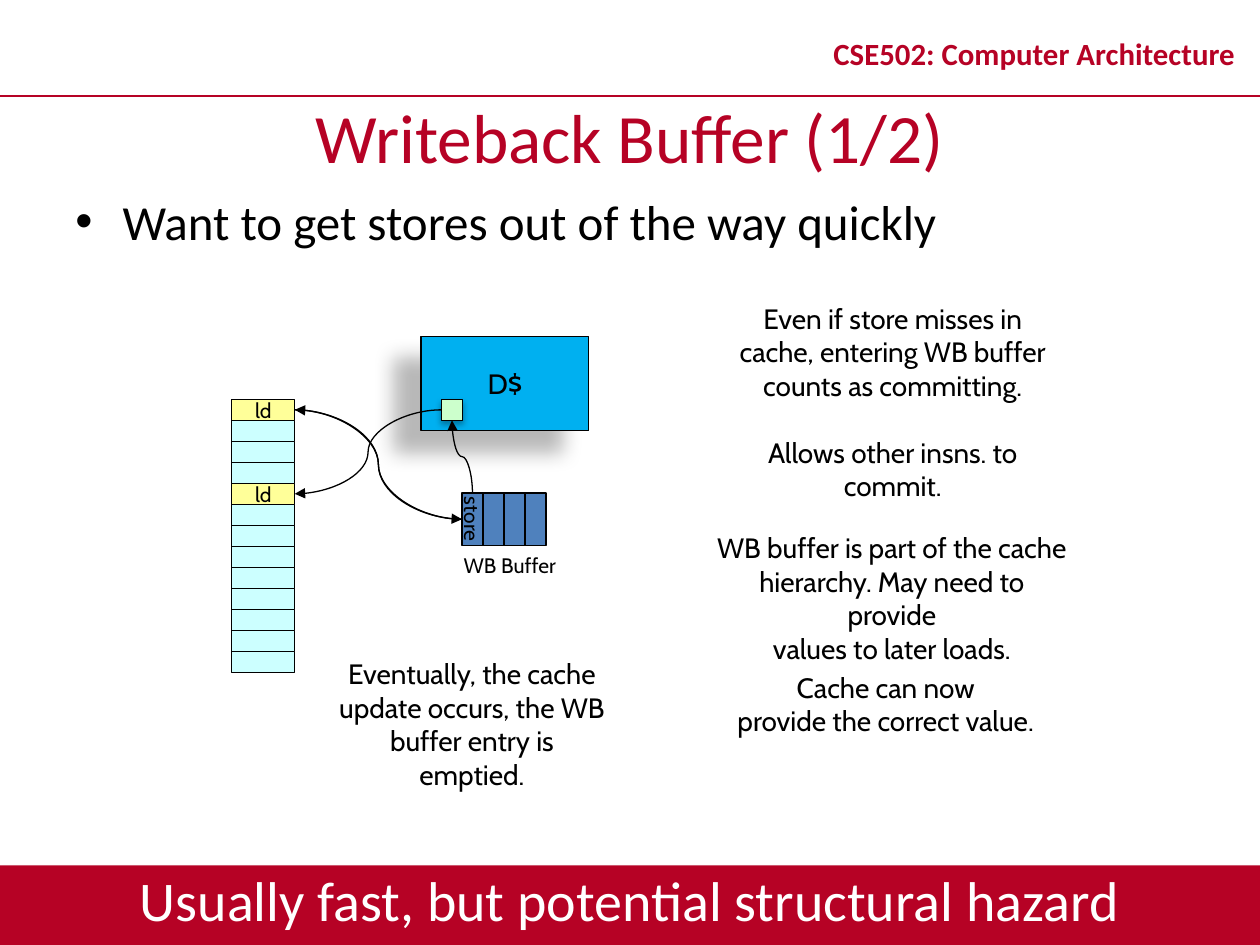
from dataclasses import dataclass
from lxml.etree import SubElement
from pptx import Presentation
from pptx.dml.color import RGBColor
from pptx.enum.shapes import MSO_CONNECTOR as Conn, MSO_SHAPE as Shape
from pptx.enum.text import MSO_ANCHOR as Anchor, PP_ALIGN as Align
from pptx.oxml.ns import qn
from pptx.util import Pt


@dataclass(frozen=True)
class Theme:
    red: str = "B60225"
    black: str = "000000"
    white: str = "FFFFFF"
    cache: str = "00B0F0"
    block: str = "CCFFCC"
    buffer: str = "4F81BD"
    entry: str = "CCFFFF"
    load: str = "FFFF99"
    head_font: str = "Calibri"
    note_font: str = "Cabin"
    title: float = 39.6
    footer: float = 32
    body: float = 28
    header: float = 17.6
    note: float = 16
    label: float = 12
    line: float = 0.75


T = Theme()


def rgb(value):
    return RGBColor.from_string(value)


def write(shape, text, size=T.note, font=T.note_font, color=T.black, bold=False,
          align=Align.CENTER, anchor=Anchor.TOP, wrap=True, spacing=None, gaps=None, bullet=0):
    tf = shape.text_frame
    tf.word_wrap = wrap
    tf.vertical_anchor = anchor
    for i, line in enumerate(text.split("\n")):
        p = tf.paragraphs[0] if i == 0 else tf.add_paragraph()
        p.alignment = align
        p.line_spacing = spacing
        p.space_before = Pt((gaps or {}).get(i, 0))
        if bullet:
            pPr = p._p.get_or_add_pPr()
            pPr.set("marL", str(Pt(bullet)))
            pPr.set("indent", str(-Pt(bullet)))
            SubElement(pPr, qn("a:buFont")).set("typeface", "Arial")
            SubElement(pPr, qn("a:buChar")).set("char", "•")
        r = p.add_run()
        r.text = line
        r.font.name, r.font.size, r.font.bold = font, Pt(size), bold
        r.font.color.rgb = rgb(color)


def text_box(s, box, text, **fmt):
    write(s.shapes.add_textbox(*map(Pt, box)), text, **fmt)


def rect(s, box, fill, line=T.black, shadow=None, text=None, size=T.label):
    sp = s.shapes.add_shape(Shape.RECTANGLE, *map(Pt, box))
    sp.fill.solid()
    sp.fill.fore_color.rgb = rgb(fill)
    if line:
        sp.line.color.rgb = rgb(line)
        sp.line.width = Pt(T.line)
    else:
        sp.line.fill.background()
    sp.shadow.inherit = False
    if shadow:
        alpha, blur, dist, angle = shadow
        effects = sp._element.spPr.find(qn("a:effectLst"))
        outer = SubElement(effects, qn("a:outerShdw"), blurRad=str(Pt(blur)),
                           dist=str(Pt(dist)), dir=str(angle * 60000), rotWithShape="0")
        color = SubElement(outer, qn("a:srgbClr"), val=T.black)
        SubElement(color, qn("a:alpha"), val=str(alpha * 1000))
    if text:
        write(sp, text, size=size, anchor=Anchor.MIDDLE, wrap=False)
    return sp


def connect(s, start, end, kind=Conn.CURVE, color=T.black, width=T.line, arrow=True):
    c = s.shapes.add_connector(kind, *map(Pt, (*start, *end)))
    c.line.color.rgb = rgb(color)
    c.line.width = Pt(width)
    if arrow:
        SubElement(c.line._get_or_add_ln(), qn("a:tailEnd"), type="triangle")
    SubElement(c._element.spPr, qn("a:effectLst"))
    return c


def connect_up(s, start, end):
    (x1, y1), (x2, y2) = start, end
    cx, cy = (x1 + x2) / 2, (y1 + y2) / 2
    dx, dy = (y1 - y2) / 2, (x1 - x2) / 2
    c = connect(s, (cx + dx, cy - dy), (cx - dx, cy + dy))
    c._element.spPr.find(qn("a:xfrm")).set("rot", str(90 * 60000))


def frame(s, box):
    x, y, w, h = box
    rect(s, (x, y + h - 45.5, w, 45.5), T.red, line=None, shadow=(35, 3.1, 1.8, 90))
    connect(s, (x, y + 54.7), (x + w, y + 54.7), kind=Conn.STRAIGHT,
            color=T.red, width=1, arrow=False)
    text_box(s, (x + w - 257.8, y + 9.4, 257.8, 45.4), "CSE502: Computer Architecture",
             size=T.header, font=T.head_font, color=T.red, bold=True,
             anchor=Anchor.MIDDLE, spacing=0.8)
    text_box(s, (x, y + h - 49, w, 45.4), "Usually fast, but potential structural hazard",
             size=T.footer, font=T.head_font, color=T.white)


def heading(s, box):
    x, y, w, h = box
    title = s.shapes.title
    title.left, title.top, title.width, title.height = map(Pt, (x, y, w, h))
    write(title, "Writeback Buffer (1/2)", size=T.title, font=T.head_font,
          color=T.red, anchor=Anchor.MIDDLE)
    text_box(s, (x + 36, y + 51.3, w - 72, 385), "Want to get stores out of the way quickly",
             size=T.body, font=T.head_font, align=Align.LEFT, bullet=27)


def load_queue(s, box, rows=13, loads=(0, 4)):
    x, y, w, h = box
    step = h / rows
    for i in range(rows):
        is_load = i in loads
        rect(s, (x, y + i * step, w, step), T.load if is_load else T.entry,
             text="ld" if is_load else None)
    return [(x + w, y + (i + 0.5) * step) for i in loads]


def writeback_buffer(s, box, cells=4):
    x, y, w, h = box
    step = w / cells
    for i in range(1, cells):
        rect(s, (x + i * step, y, step, h), T.buffer)
    store = rect(s, (x + (step - h) / 2, y + (h - step) / 2, h, step), T.buffer, text="store")
    store.rotation = 90
    text_box(s, (x - 6.2, y + h + 0.5, 67, 36), "WB Buffer", size=T.label)
    return (x, y + h / 2), (x + step / 2, y)


def data_cache(s, box):
    x, y, w, h = box
    rect(s, box, T.cache, shadow=(28, 11.8, 19.7, 141), text="D$", size=T.note)
    side = 12
    bx, by = x + 11.8, y + h - 18
    rect(s, (bx, by, side, side), T.block, shadow=(32, 3.5, 2.2, 90))
    return (bx, by + side / 2), (bx + side / 2, by + side)


def diagram(s, box):
    x, y, w, h = box
    block_left, block_bottom = data_cache(s, (x + 108, y, 96, 54))
    first_load, second_load = load_queue(s, (x, y + 36, 36, 156))
    store_left, store_top = writeback_buffer(s, (x + 131.5, y + 89.5, 48, 30))
    connect(s, first_load, store_left)
    connect(s, store_left, first_load)
    connect(s, block_left, second_load)
    connect_up(s, store_top, block_bottom)
    text_box(s, (x + 53.3, y + 179.5, 167.8, 84),
             "Eventually, the cache\nupdate occurs, the WB\nbuffer entry is emptied.")


def notes_column(s, box):
    x, y, w, h = box
    text_box(s, (x, y, w, 120),
             "Even if store misses in\ncache, entering WB buffer\ncounts as committing.\n"
             "Allows other insns. to commit.", gaps={3: 19.2})
    text_box(s, (x - 0.5, y + 131.3, w, 84),
             "WB buffer is part of the cache\nhierarchy. May need to provide\n"
             "values to later loads.")
    text_box(s, (x + 11.5, y + h - 46, 184.3, 46),
             "Cache can now\nprovide the correct value.")


def main():
    prs = Presentation()
    prs.slide_width, prs.slide_height = Pt(720), Pt(540)
    s = prs.slides.add_slide(prs.slide_layouts[5])
    frame(s, (0, 0, 720, 540))
    heading(s, (0, 54.7, 720, 45.4))
    diagram(s, (132.5, 192.2, 221, 264))
    notes_column(s, (402.5, 168.5, 215.3, 257))
    prs.save("out.pptx")


if __name__ == "__main__":
    main()
